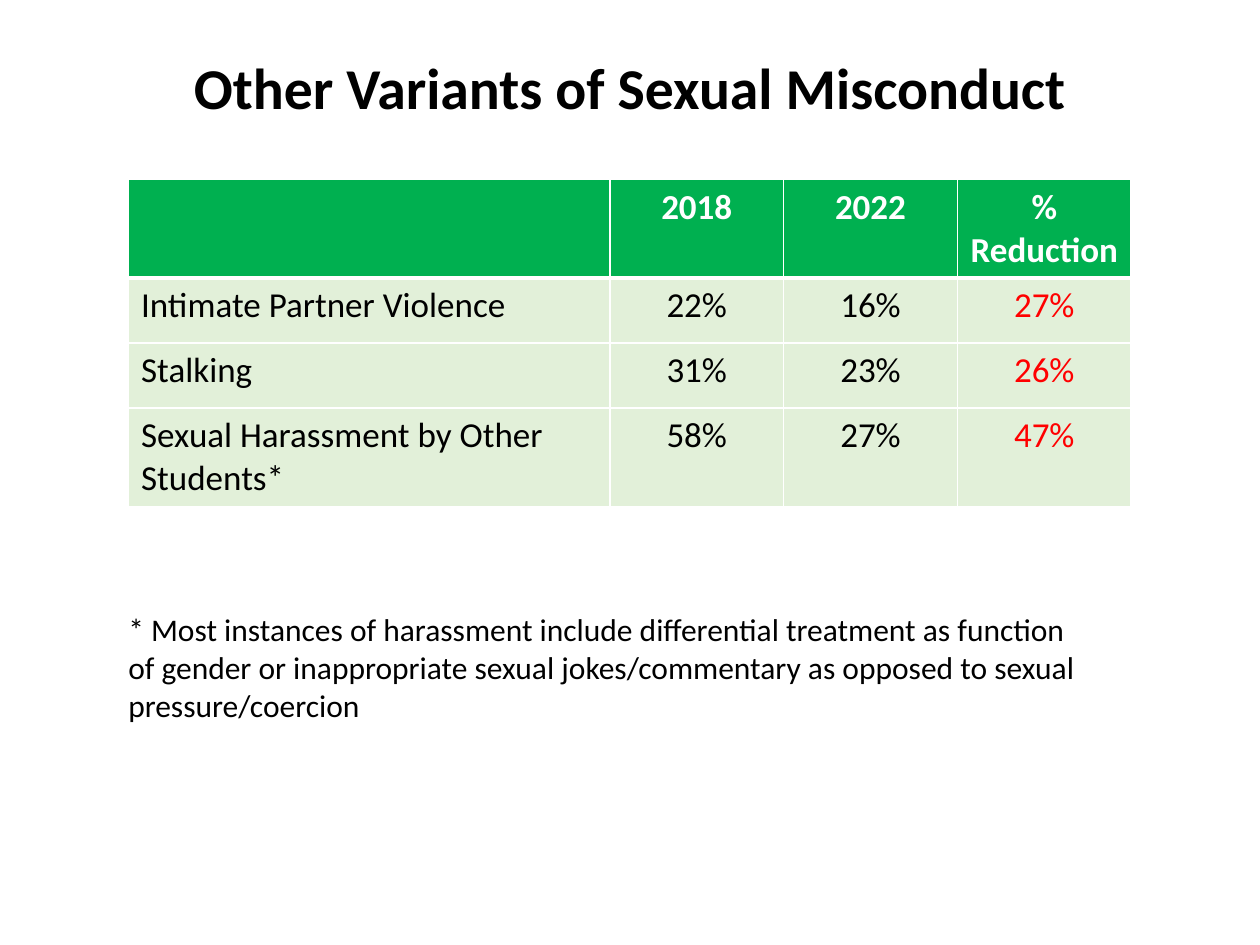
"""Build a slide with a table of misconduct rates in 2018 and 2022."""
from typing import NamedTuple

from lxml import etree
from pptx import Presentation
from pptx import util as u
from pptx.dml.color import RGBColor
from pptx.enum import text
from pptx.oxml.ns import qn

WIDTH, HEIGHT = 10, 7.5
COLORS = {"ink": "000000", "header": "00B050", "body": "E2F0D9",
          "line": "FFFFFF", "reduction": "FF0000"}
LEFT, CENTER = text.PP_ALIGN.LEFT, text.PP_ALIGN.CENTER


class Box(NamedTuple):
    left: float
    top: float
    width: float
    height: float

    def emu(self) -> list[int]:
        sizes = (WIDTH, HEIGHT, WIDTH, HEIGHT)
        return [u.Inches(share * size) for share, size in zip(self, sizes)]


class Style(NamedTuple):
    size: float
    color: str = "ink"
    bold: bool = False
    align: int = LEFT
    spacing: float = 1.0


TITLE_BOX = Box(0, 0, 1, 0.193)
TABLE_BOX = Box(0.102, 0.19, 0.796, 0.328)
NOTE_BOX = Box(0.092, 0.639, 0.777, 0.175)
COLUMN_SHARES = (0.48, 0.1733, 0.1733, 0.1733)
ROW_SHARES = (0.29, 0.21, 0.21, 0.29)

TITLE = "Other Variants of Sexual Misconduct"
ROWS = (
    ("", "2018", "2022", "% Reduction"),
    ("Intimate Partner Violence", "22%", "16%", "27%"),
    ("Stalking", "31%", "23%", "26%"),
    ("Sexual Harassment by Other Students*", "58%", "27%", "47%"),
)
NOTE = ("* Most instances of harassment include differential treatment as function "
        "of gender or inappropriate sexual jokes/commentary as opposed to sexual "
        "pressure/coercion")


def rgb(name: str) -> RGBColor:
    return RGBColor.from_string(COLORS[name])


def write(tf, words: str, style: Style) -> None:
    p = tf.paragraphs[0]
    p.alignment, p.line_spacing = style.align, style.spacing
    font = p.font
    if words:
        r = p.add_run()
        r.text = words
        font = r.font
    formats = {"name": "Calibri", "size": u.Pt(style.size), "bold": style.bold}
    for key, value in formats.items():
        setattr(font, key, value)
    font.color.rgb = rgb(style.color)


def draw_borders(cell, widths: dict[str, float]) -> None:
    tc_pr = cell._tc.get_or_add_tcPr()
    for i, (side, width) in enumerate(widths.items()):
        ln = etree.Element(qn(f"a:ln{side}"), w=str(u.Pt(width)))
        fill = etree.SubElement(ln, qn("a:solidFill"))
        etree.SubElement(fill, qn("a:srgbClr"), val=COLORS["line"])
        tc_pr.insert(i, ln)


def cell_style(row: int, col: int) -> Style:
    align = CENTER if col else LEFT
    if row == 0:
        return Style(20, "line", True, align)
    return Style(20, "reduction" if col == 3 else "ink", align=align)


def draw_table(s, box: Box) -> None:
    left, top, width, height = box.emu()
    table = s.shapes.add_table(len(ROWS), len(ROWS[0]), left, top, width, height).table
    for column, share in zip(table.columns, COLUMN_SHARES):
        column.width = int(width * share)
    for row, share in zip(table.rows, ROW_SHARES):
        row.height = int(height * share)
    for i, row in enumerate(ROWS):
        for j, words in enumerate(row):
            cell = table.cell(i, j)
            cell.fill.solid()
            cell.fill.fore_color.rgb = rgb("body" if i else "header")
            draw_borders(cell, {"L": 1, "R": 1, "T": 3 if i == 1 else 1,
                                "B": 1 if i else 3})
            write(cell.text_frame, words, cell_style(i, j))


def draw_title(s, box: Box) -> None:
    sp = s.shapes.title
    sp.left, sp.top, sp.width, sp.height = box.emu()
    sp.text_frame.vertical_anchor = text.MSO_ANCHOR.MIDDLE
    write(sp.text_frame, TITLE, Style(33, bold=True, align=CENTER, spacing=0.9))


def draw_note(s, box: Box) -> None:
    tf = s.shapes.add_textbox(*box.emu()).text_frame
    tf.word_wrap = True
    write(tf, NOTE, Style(18))


def main() -> None:
    prs = Presentation()
    prs.slide_width, prs.slide_height = u.Inches(WIDTH), u.Inches(HEIGHT)
    s = prs.slides.add_slide(prs.slide_layouts.get_by_name("Title Only"))
    draw_title(s, TITLE_BOX)
    draw_table(s, TABLE_BOX)
    draw_note(s, NOTE_BOX)
    prs.save("out.pptx")


if __name__ == "__main__":
    main()
